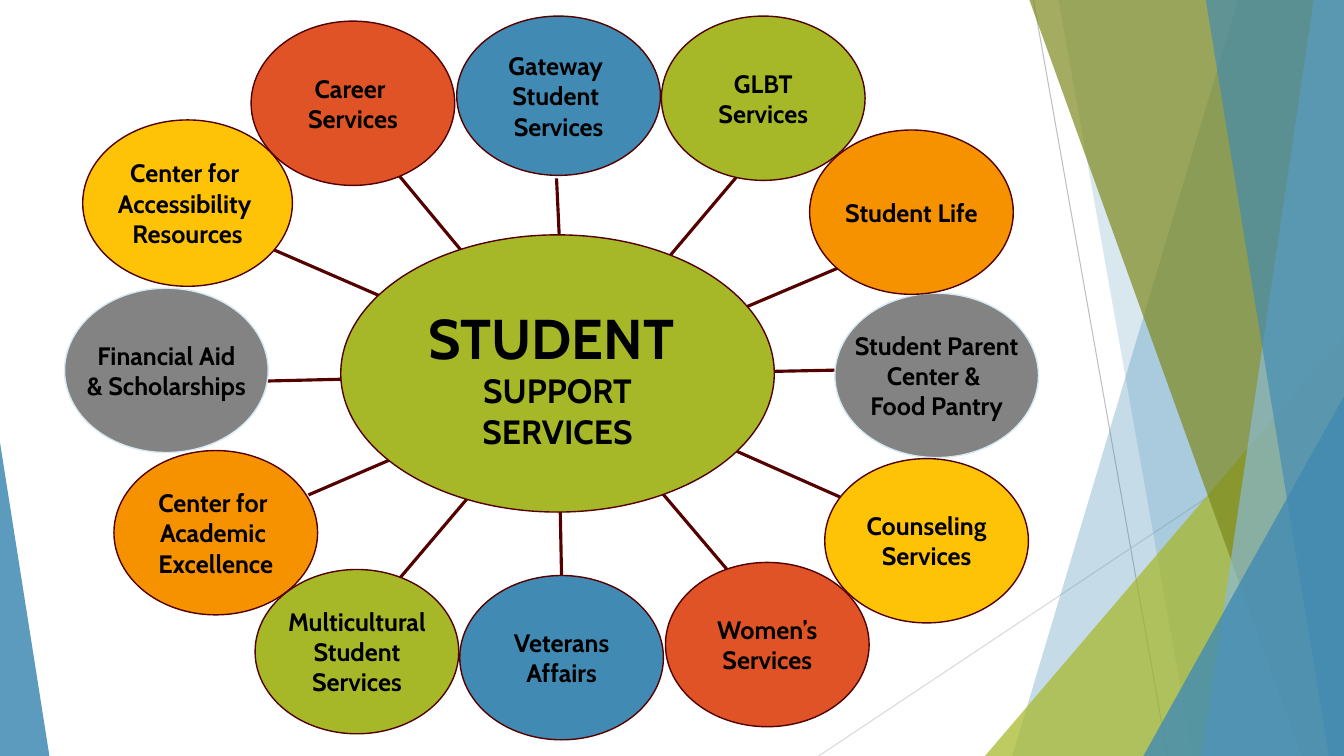
from lxml.etree import SubElement
from pptx import Presentation
from pptx.dml.color import RGBColor
from pptx.enum.shapes import MSO_CONNECTOR, MSO_SHAPE
from pptx.enum.text import MSO_ANCHOR, PP_ALIGN
from pptx.oxml.ns import qn
from pptx.util import Inches, Pt

WIDE, HIGH = 13.33, 7.5
BLUE, GREEN, RED = "418AB3", "A6B727", "DF5327"
GOLD, ORANGE, GRAY = "FEC306", "F69200", "838383"
MAROON, PALE = "540000", "D8E8F1"


def tint(color, value):
    """Set a fill or font colour from a hex string."""
    color.rgb = RGBColor.from_string(value)


def write(frame, text, sizes=(18,), font="Cabin", color="000000", bold=True, inset=0):
    """Write centred lines; the last size serves all lines that follow."""
    frame.word_wrap = False
    frame.vertical_anchor = MSO_ANCHOR.MIDDLE
    frame.margin_left = frame.margin_right = frame.margin_bottom = 0
    frame.margin_top = Inches(inset)
    for i, line in enumerate(text.split("\n")):
        para = frame.paragraphs[0] if i == 0 else frame.add_paragraph()
        para.alignment = PP_ALIGN.CENTER
        run = para.add_run()
        run.text = line
        run.font.size = Pt(sizes[min(i, len(sizes) - 1)])
        run.font.name, run.font.bold = font, bold
        tint(run.font.color, color)


class Canvas:
    def __init__(self, slide, font="Cabin"):
        self.shapes = slide.shapes
        self.font = font

    def paint(self, shape, fill, alpha=100, edge=None):
        shape.shadow.inherit = False
        shape.fill.solid()
        tint(shape.fill.fore_color, fill)
        if alpha < 100:
            color = shape._element.spPr.find(qn("a:solidFill"))[0]
            SubElement(color, qn("a:alpha")).set("val", str(alpha * 1000))
        if edge:
            tint(shape.line.color, edge)
            shape.line.width = Pt(1)
        else:
            shape.line.fill.background()

    def line(self, x1, y1, x2, y2, color=MAROON, width=2.25):
        ends = [Inches(v) for v in (x1, y1, x2, y2)]
        link = self.shapes.add_connector(MSO_CONNECTOR.STRAIGHT, *ends)
        tint(link.line.color, color)
        link.line.width = Pt(width)
        SubElement(link._element.spPr, qn("a:effectLst"))

    def band(self, top, foot, fill, alpha):
        """Full-height strip from a slanted left side to the right edge."""
        pen = self.shapes.build_freeform(Inches(top), 0)
        corners = [(WIDE, 0), (WIDE, HIGH), (foot, HIGH)]
        pen.add_line_segments([(Inches(x), Inches(y)) for x, y in corners])
        self.paint(pen.convert_to_shape(), fill, alpha)

    def wedge(self, left, top, width, apex, fill, alpha):
        """Triangle that stands on the bottom edge of the slide."""
        box = [Inches(v) for v in (left, top, width, HIGH - top)]
        shape = self.shapes.add_shape(MSO_SHAPE.ISOSCELES_TRIANGLE, *box)
        shape.adjustments[0] = apex
        self.paint(shape, fill, alpha)

    def oval(self, text, left, top, fill, width=2.02, height=1.63, edge=MAROON, **style):
        box = [Inches(v) for v in (left, top, width, height)]
        shape = self.shapes.add_shape(MSO_SHAPE.OVAL, *box)
        self.paint(shape, fill, edge=edge)
        write(shape.text_frame, text, font=self.font, **style)


deck = Presentation()
deck.slide_width, deck.slide_height = Inches(WIDE), Inches(HIGH)
page = Canvas(deck.slides.add_slide(deck.slide_layouts[6]))

# Facets at the sides
page.line(10.25, 0, 11.58, HIGH, color="BFBFBF", width=0.75)
page.line(WIDE, 4.03, 8.12, HIGH, color="D9D9D9", width=0.75)
page.band(12.28, 10.04, BLUE, 30)
page.band(10.5, 11.83, BLUE, 20)
page.wedge(9.77, 3.33, 3.56, 1, GREEN, 72)
page.band(10.21, 12.91, "7D891D", 70)
page.band(13.03, 11.92, "8ABAD4", 70)
page.band(11.96, 13.18, BLUE, 65)
page.wedge(11.34, 3.93, 1.99, 1, BLUE, 80)
page.wedge(0, 4.39, 0.49, 0, BLUE, 85)

# Spokes, partly hidden by the hub and the services
spokes = [
    (7.64, 3.66, 2.65, 3.78), (8.89, 3.66, 4.39, 3.75),
    (5.57, 5.72, 5.52, 3.23), (5.57, 2.83, 5.52, 1.77),
    (3.97, 5.73, 6.64, 2.58), (7.22, 5.66, 5.31, 3.41),
    (4.64, 4.91, 7.31, 1.75), (7.14, 4.4, 2.72, 2.48),
    (7.31, 3.08, 3.06, 4.91), (4.72, 2.66, 3.89, 1.66),
    (8.33, 4.93, 3.97, 3), (8.31, 2.66, 3.97, 4.5),
]
for spoke in spokes:
    page.line(*spoke)

# Services around the hub
page.oval("Financial Aid\n& Scholarships", 0.64, 2.86, GRAY, edge=PALE)
page.oval("Student Parent\nCenter & \nFood Pantry", 8.28, 2.91, GRAY, edge=PALE)
page.oval("Gateway \nStudent \nServices", 4.53, 0.16, BLUE, height=1.58)
page.oval("Center for \nAccessibility \nResources", 0.82, 1.19, GOLD, width=2.08, height=1.65)
services = [
    ("Veterans\nAffairs", 4.56, 5.71, BLUE),
    ("Multicultural\nStudent\nServices", 2.53, 5.65, GREEN),
    ("Women’s\nServices", 6.6, 5.58, RED),
    ("GLBT\nServices", 6.56, 0.16, GREEN),
    ("Center for \nAcademic \nExcellence", 1.13, 4.47, ORANGE),
    ("Career \nServices", 2.49, 0.21, RED),
    ("Counseling\nServices", 8.18, 4.55, GOLD),
    ("Student Life", 8.03, 1.29, ORANGE),
]
for service in services:
    page.oval(*service)

# Hub
page.oval("STUDENT \nSUPPORT\nSERVICES", 3.38, 2.33, GREEN, width=4.3, height=2.75,
          sizes=(40, 24), inset=0.07)

deck.save("out.pptx")
